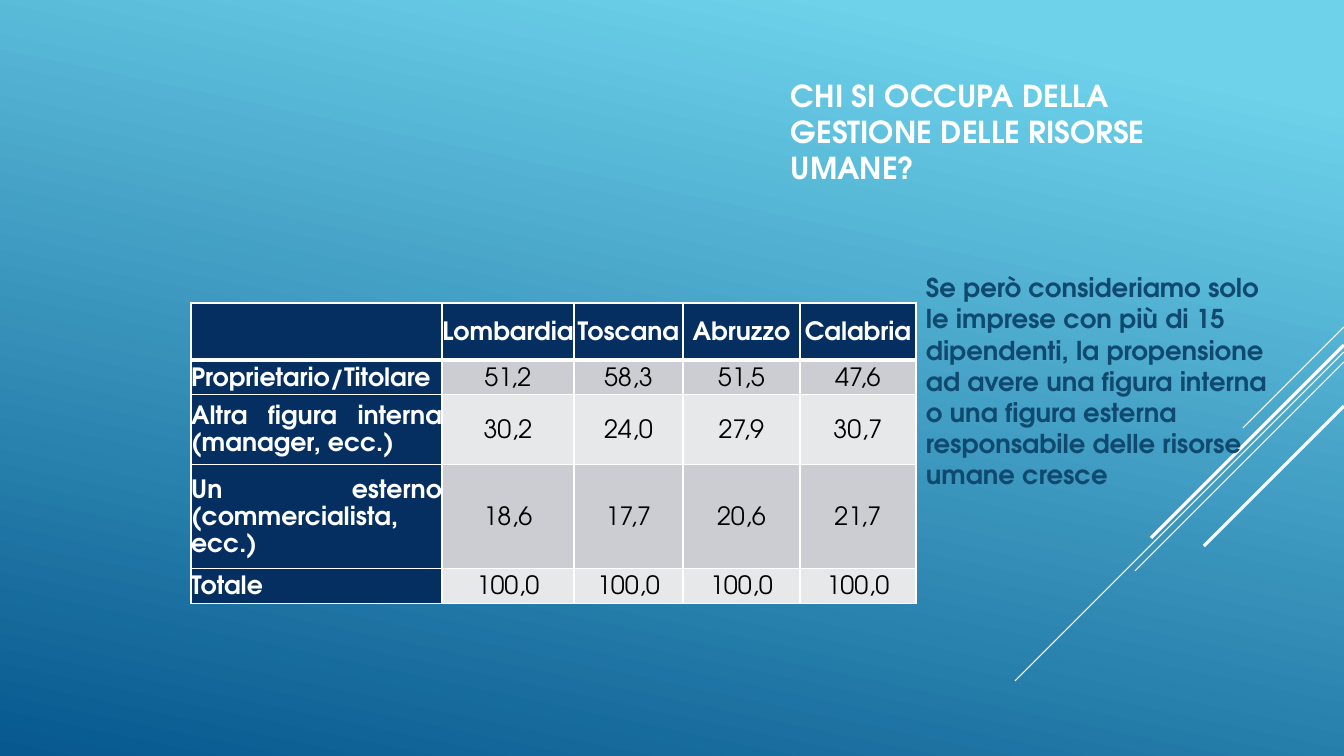
from dataclasses import dataclass

from lxml import etree
from pptx import Presentation
from pptx.dml.color import RGBColor
from pptx.enum.shapes import MSO_CONNECTOR
from pptx.enum.text import MSO_ANCHOR, PP_ALIGN
from pptx.oxml.ns import qn
from pptx.util import Emu, Pt

PX = 914400 / 100.8
SLIDE_W, SLIDE_H = 1344, 756
STRAIGHT = MSO_CONNECTOR.STRAIGHT
TOP, MIDDLE, BOTTOM = MSO_ANCHOR.TOP, MSO_ANCHOR.MIDDLE, MSO_ANCHOR.BOTTOM
CENTER, JUSTIFY = PP_ALIGN.CENTER, PP_ALIGN.JUSTIFY

TITLE = "CHI SI OCCUPA DELLA GESTIONE DELLE RISORSE UMANE?"
COMMENT = (
    "Se però consideriamo solo le imprese con più di 15 dipendenti, la propensione "
    "ad avere una figura interna o una figura esterna responsabile delle risorse "
    "umane cresce"
)
SHARES = [
    ["", "Lombardia", "Toscana", "Abruzzo", "Calabria"],
    ["Proprietario/Titolare", "51,2", "58,3", "51,5", "47,6"],
    ["Altra figura interna (manager, ecc.)", "30,2", "24,0", "27,9", "30,7"],
    ["Un esterno (commercialista, ecc.)", "18,6", "17,7", "20,6", "21,7"],
    ["Totale", "100,0", "100,0", "100,0", "100,0"],
]
COLUMN_WIDTHS = [251, 132, 109, 117, 116]
ROW_HEIGHTS = [57, 28, 57, 80, 28]
RAYS = [(0, 101, 0.75), (25, 329, 0.75), (35, 209, 0.75), (18, 193, 2.25), (79, 140, 2.25)]


@dataclass(frozen=True)
class Theme:
    """Colours and type sizes of the slide."""

    font: str = "TeX Gyre Adventor"
    sky: str = "6ED2EB"
    sea: str = "06588E"
    white: str = "FFFFFF"
    black: str = "000000"
    navy: str = "052F61"
    comment: str = "0F496F"
    bands: tuple = ("E7E8EA", "CCCDD2")
    title_size: float = 21.6
    comment_size: float = 18.5
    table_size: float = 18


THEME = Theme()


def px(length):
    """Turn a length in px into EMU."""
    return Emu(round(length * PX))


def style_text(paragraph, size, color, bold):
    """Format the runs of a paragraph."""
    for run in paragraph.runs:
        run.font.name = THEME.font
        run.font.size = Pt(size)
        run.font.bold = bold
        run.font.color.rgb = RGBColor.from_string(color)


def paint_background(slide):
    """Fill the slide with the slanted blue gradient."""
    fill = slide.background.fill
    fill.gradient()
    fill.gradient_angle = 258
    stops = ((0.1, THEME.sky), (1, THEME.sea))
    for stop, (position, color) in zip(fill.gradient_stops, stops):
        stop.position = position
        stop.color.rgb = RGBColor.from_string(color)


def add_rays(slide, right, top):
    """Draw the diagonal rays falling leftwards from the slide's right edge."""
    for drop, run, weight in RAYS:
        start = top + drop
        ray = slide.shapes.add_connector(
            STRAIGHT, px(right), px(start), px(right - run), px(start + run)
        )
        ray.line.color.rgb = RGBColor.from_string(THEME.white)
        ray.line.width = Pt(weight)
        etree.SubElement(ray._element.spPr, qn("a:effectLst"))


def add_text(slide, box, text, size, color, anchor):
    """Place a bold wrapped text in the box and return its frame."""
    frame = slide.shapes.add_textbox(*map(px, box)).text_frame
    frame.word_wrap = True
    frame.vertical_anchor = anchor
    frame.text = text
    style_text(frame.paragraphs[0], size, color, True)
    return frame


def add_title(slide, box):
    """Place the heading with one line of room below it."""
    frame = add_text(slide, box, TITLE, THEME.title_size, THEME.white, BOTTOM)
    frame.margin_top = 0
    frame.margin_bottom = px(41)


def add_comment(slide, box):
    """Place the remark beside the table."""
    frame = add_text(slide, box, COMMENT, THEME.comment_size, THEME.comment, TOP)
    frame.paragraphs[0].space_after = Pt(6)


def border_cell(cell, bottom_weight):
    """Give a cell white borders, with its own weight at the bottom."""
    properties = cell._tc.get_or_add_tcPr()
    weights = {"lnL": 1, "lnR": 1, "lnT": 1, "lnB": bottom_weight}
    for index, (side, weight) in enumerate(weights.items()):
        line = etree.Element(qn(f"a:{side}"), w=str(Pt(weight)))
        fill = etree.SubElement(line, qn("a:solidFill"))
        etree.SubElement(fill, qn("a:srgbClr"), val=THEME.white)
        properties.insert(index, line)


def fill_cell(cell, text, row, column):
    """Write and format one cell according to its place in the table."""
    heading = row == 0 or column == 0
    cell.fill.solid()
    color = THEME.navy if heading else THEME.bands[row % 2]
    cell.fill.fore_color.rgb = RGBColor.from_string(color)
    cell.vertical_anchor = MIDDLE
    cell.margin_left = cell.margin_right = cell.margin_top = cell.margin_bottom = 0
    cell.text_frame.text = text
    paragraph = cell.text_frame.paragraphs[0]
    paragraph.alignment = CENTER if column else JUSTIFY
    paragraph.line_spacing = 1.15
    style_text(paragraph, THEME.table_size, THEME.white if heading else THEME.black, heading)
    border_cell(cell, 1 if row else 3)


def add_shares_table(slide, left, top):
    """Build the table of shares by region."""
    table = slide.shapes.add_table(
        len(SHARES), len(COLUMN_WIDTHS), px(left), px(top),
        px(sum(COLUMN_WIDTHS)), px(sum(ROW_HEIGHTS)),
    ).table
    for column, width in zip(table.columns, COLUMN_WIDTHS):
        column.width = px(width)
    for row, height in zip(table.rows, ROW_HEIGHTS):
        row.height = px(height)
    for row, shares in enumerate(SHARES):
        for column, text in enumerate(shares):
            fill_cell(table.cell(row, column), text, row, column)


def main():
    """Build the slide and save it."""
    deck = Presentation()
    deck.slide_width, deck.slide_height = px(SLIDE_W), px(SLIDE_H)
    slide = deck.slides.add_slide(deck.slide_layouts[6])
    paint_background(slide)
    add_rays(slide, SLIDE_W, 327)
    add_title(slide, (781, 76, 403, 151))
    add_shares_table(slide, 191, 303)
    add_comment(slide, (916, 267, 380, 231))
    deck.save("out.pptx")


if __name__ == "__main__":
    main()
